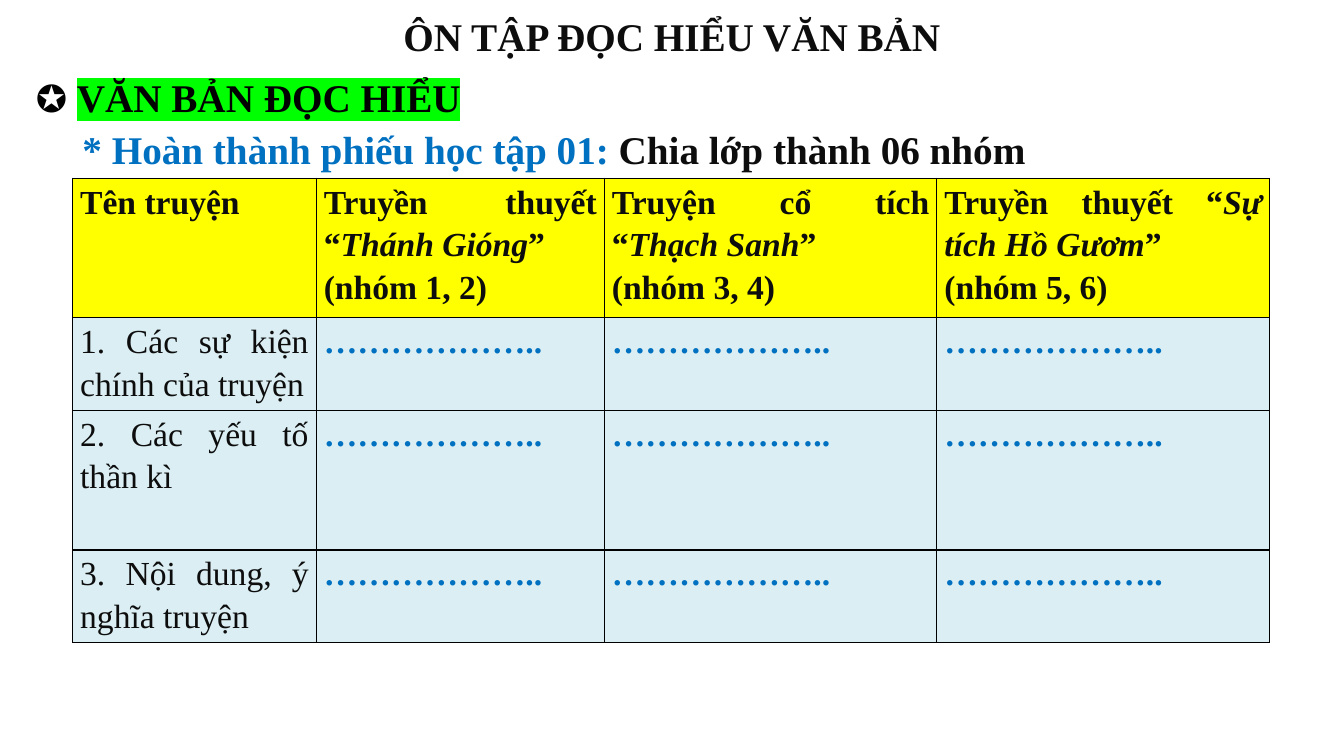
import dataclasses

import pptx
import pptx.dml.color
import pptx.enum.text
import pptx.oxml
import pptx.oxml.ns
import pptx.util

Cm = pptx.util.Cm
Pt = pptx.util.Pt
ALIGN = pptx.enum.text.PP_ALIGN


@dataclasses.dataclass(frozen=True)
class Theme:
    font: str = "Times New Roman"
    heading_size: int = 28
    table_size: int = 24
    line_spacing: float = 1.15
    ink: str = "0D0D0D"
    black: str = "000000"
    blue: str = "0070C0"
    green: str = "00FF00"
    header_fill: str = "FFFF00"
    body_fill: str = "DAEEF3"


theme = Theme()


def rgb(color):
    return pptx.dml.color.RGBColor.from_string(color)


def write_runs(p, runs, size, align=ALIGN.JUSTIFY):
    """Each run is (text, colour, style letters: b = bold, i = italic)."""
    p.alignment = align
    p.line_spacing = theme.line_spacing
    for text, color, style in runs:
        r = p.add_run()
        r.text = text
        r.font.name = theme.font
        r.font.size = Pt(size)
        r.font.bold = "b" in style
        r.font.italic = "i" in style
        r.font.color.rgb = rgb(color)


prs = pptx.Presentation()
prs.slide_width, prs.slide_height = Cm(33.87), Cm(19.05)
s = prs.slides.add_slide(prs.slide_layouts[6])

# Headings
headings = [
    ((9.83, 0, 14.2, 1.55), ALIGN.CENTER, 10,
     [("ÔN TẬP ĐỌC HIỂU VĂN BẢN", theme.ink, "b")]),
    ((0.66, 1.55, 11.43, 1.63), ALIGN.JUSTIFY, 0,
     [("✪ ", theme.black, ""), ("VĂN BẢN ĐỌC HIỂU", theme.black, "b")]),
    ((1.83, 2.86, 24.56, 1.63), ALIGN.JUSTIFY, 0,
     [("* Hoàn thành phiếu học tập 01: ", theme.blue, "b"),
      ("Chia lớp thành 06 nhóm", theme.ink, "b")]),
]
boxes = []
for place, align, space_after, runs in headings:
    sp = s.shapes.add_textbox(*(Cm(v) for v in place))
    tf = sp.text_frame
    tf.word_wrap = False
    tf.auto_size = pptx.enum.text.MSO_AUTO_SIZE.SHAPE_TO_FIT_TEXT
    write_runs(tf.paragraphs[0], runs, theme.heading_size, align)
    tf.paragraphs[0].space_after = Pt(space_after)
    boxes.append(sp)

# Green marker behind the section name
section_run = boxes[1].text_frame.paragraphs[0].runs[1]
highlight = pptx.oxml.parse_xml(
    f'<a:highlight {pptx.oxml.ns.nsdecls("a")}>'
    f'<a:srgbClr val="{theme.green}"/></a:highlight>')
section_run.font.fill  # the marker follows the text colour
section_run.font._rPr.find(pptx.oxml.ns.qn("a:solidFill")).addnext(highlight)

# Worksheet content: a cell is a list of paragraphs, a paragraph a list of runs
stories = [
    ("Truyền thuyết “", "Thánh Gióng", "(nhóm 1, 2)"),
    ("Truyện cổ tích “", "Thạch Sanh", "(nhóm 3, 4)"),
    ("Truyền thuyết “", "Sự tích Hồ Gươm", "(nhóm 5, 6)"),
]
tasks = [
    "1. Các sự kiện chính của truyện",
    "2. Các yếu tố thần kì",
    "3. Nội dung, ý nghĩa truyện",
]
header = [[[("Tên truyện", theme.ink, "b")]]]
for genre, name, groups in stories:
    header.append([
        [(genre, theme.ink, "b"), (name, theme.ink, "bi"), ("”", theme.ink, "b")],
        [(groups, theme.ink, "b")],
    ])
blank = [[("………………..", theme.blue, "b")]]
rows = [header] + [[[[(task, theme.ink, "")]]] + [blank] * len(stories)
                   for task in tasks]

# Worksheet table
col_widths = [6.14, 7.26, 8.38, 8.38]
row_heights = [3.51, 2.33, 3.51, 2.33]
table = s.shapes.add_table(
    len(rows), len(col_widths), Cm(1.83), Cm(4.5),
    Cm(sum(col_widths)), Cm(sum(row_heights))).table
table.first_row = table.horz_banding = False
for column, width in zip(table.columns, col_widths):
    column.width = Cm(width)
for row, height in zip(table.rows, row_heights):
    row.height = Cm(height)

for i, row in enumerate(rows):
    for j, paragraphs in enumerate(row):
        cell = table.cell(i, j)
        cell.margin_left = cell.margin_right = Cm(0.19)
        cell.margin_top = cell.margin_bottom = 0
        tf = cell.text_frame
        for k, runs in enumerate(paragraphs):
            p = tf.paragraphs[0] if k == 0 else tf.add_paragraph()
            write_runs(p, runs, theme.table_size)
        cell.fill.solid()
        cell.fill.fore_color.rgb = rgb(theme.body_fill if i else theme.header_fill)
        # Borders come before the fill in the cell properties
        for n, side in enumerate(("lnL", "lnR", "lnT", "lnB")):
            cell._tc.tcPr.insert(n, pptx.oxml.parse_xml(
                f'<a:{side} {pptx.oxml.ns.nsdecls("a")} w="{Pt(1)}"><a:solidFill>'
                f'<a:srgbClr val="{theme.black}"/></a:solidFill></a:{side}>'))

prs.save("out.pptx")
